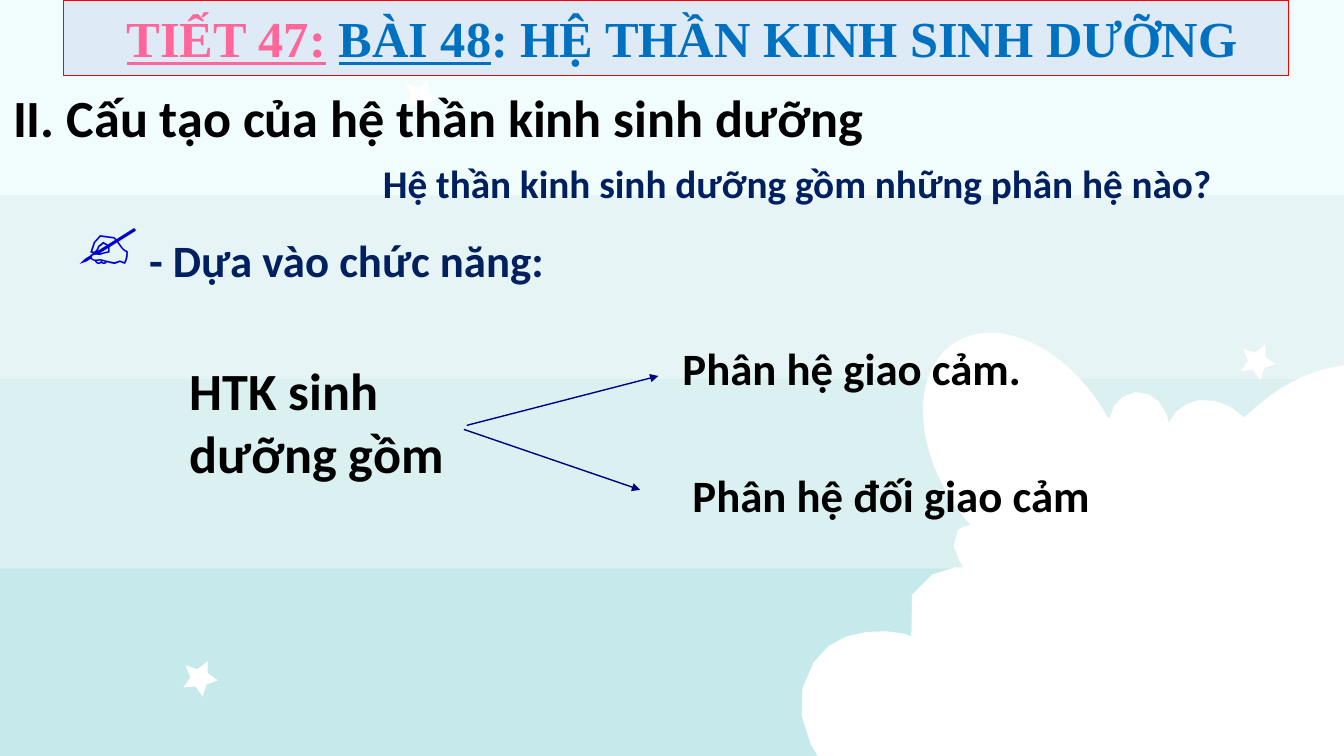
from dataclasses import dataclass

from lxml.etree import SubElement
from pptx import Presentation
from pptx.dml.color import RGBColor
from pptx.enum.shapes import MSO_CONNECTOR as Connector, MSO_SHAPE as Preset
from pptx.enum.text import MSO_ANCHOR as Anchor, PP_ALIGN as Align
from pptx.oxml.ns import qn
from pptx.util import Inches, Pt


@dataclass(frozen=True)
class Theme:
    base: str = "E7F4F5"
    top_band: str = "F1FCFC"
    middle_band: str = "DBF0F1"
    bottom_band: str = "C6EAEB"
    cloud: str = "FFFFFF"
    ink: str = "000000"
    navy: str = "002060"
    arrow: str = "000080"
    hand: str = "0000CC"
    pink: str = "FF6699"
    blue: str = "0070C0"
    banner: str = "DEEBF7"
    banner_edge: str = "FF0000"
    body_font: str = "Calibri"
    title_font: str = "Times New Roman"
    symbol_font: str = "Arial"
    hand_size: float = 48
    heading_size: float = 37.3
    title_size: float = 36
    body_size: float = 32
    question_size: float = 28


THEME = Theme()

CLOUD_START = (10.16, 3.41)
CLOUD_CURVES = [
    ((10.34, 3.76), (10.99, 4.14), (11.01, 4.15)),
    ((11.01, 4.02), (11.13, 3.91), (11.26, 3.89)),
    ((11.39, 3.88), (11.52, 3.97), (11.56, 4.09)),
    ((11.57, 4.11), (11.58, 4.13), (11.58, 4.15)),
    ((11.58, 4.16), (11.59, 4.18), (11.59, 4.2)),
    ((11.64, 4.07), (11.76, 3.99), (11.89, 3.97)),
    ((12.04, 3.95), (12.21, 4.01), (12.34, 4.14)),
    ((12.45, 4.04), (12.57, 3.94), (12.69, 3.86)),
    ((12.89, 3.73), (13.12, 3.64), (13.36, 3.62)),
    ((13.5, 3.6), (13.65, 3.6), (13.79, 3.64)),
    ((14.65, 3.85), (14.83, 4.86), (14.69, 5.61)),
    ((14.6, 6.08), (14.36, 6.48), (14.06, 6.83)),
    ((13.99, 6.91), (13.93, 6.98), (13.86, 7.06)),
    ((13.44, 7.51), (12.93, 7.87), (12.37, 8.13)),
    ((11.89, 8.35), (11.37, 8.49), (10.84, 8.56)),
    ((10.8, 8.56), (10.76, 8.57), (10.73, 8.57)),
    ((10, 8.64), (9.24, 8.6), (8.64, 8.13)),
    ((8.39, 7.93), (8.18, 7.67), (8.04, 7.38)),
    ((7.91, 7.11), (7.9, 6.82), (8.07, 6.57)),
    ((8.2, 6.37), (8.4, 6.29), (8.59, 6.27)),
    ((8.8, 6.24), (9, 6.29), (9.04, 6.31)),
    ((8.89, 5.77), (9.29, 5.66), (9.47, 5.63)),
    ((9.53, 5.63), (9.56, 5.63), (9.56, 5.63)),
    ((9.56, 5.63), (9.37, 5.4), (9.5, 5.26)),
    ((9.54, 5.23), (9.59, 5.21), (9.64, 5.2)),
    ((9.7, 5.19), (9.76, 5.2), (9.81, 5.23)),
    ((9.85, 4.49), (9.54, 4.08), (9.54, 4.08)),
]
STAR = [(0.24, 0), (0.24, 0.12), (0.34, 0.19), (0.23, 0.23), (0.19, 0.35),
        (0.12, 0.25), (0, 0.26), (0.07, 0.16), (0.02, 0.04), (0.14, 0.08)]


def rgb(color):
    return RGBColor.from_string(color)


def paint(shape, color):
    shape.shadow.inherit = False
    shape.fill.solid()
    shape.fill.fore_color.rgb = rgb(color)
    shape.line.fill.background()


def add_preset(slide, preset, box, color, rotation=0):
    shape = slide.shapes.add_shape(preset, *map(Inches, box))
    paint(shape, color)
    shape.rotation = rotation
    return shape


def add_outline(slide, points, color):
    corners = [(Inches(x), Inches(y)) for x, y in points]
    builder = slide.shapes.build_freeform(*corners[0])
    builder.add_line_segments(corners[1:], close=True)
    paint(builder.convert_to_shape(), color)


def trace_curves(start, curves, steps=3):
    points = [start]
    for first, second, end in curves:
        begin = points[-1]
        for step in range(1, steps + 1):
            t = step / steps
            u = 1 - t
            points.append(tuple(
                u**3 * a + 3 * u * u * t * b + 3 * u * t * t * c + t**3 * d
                for a, b, c, d in zip(begin, first, second, end)))
    return points


def style_run(run, font, size, color, bold=True, underline=False):
    run.font.name = font
    run.font.size = Pt(size)
    run.font.color.rgb = rgb(color)
    run.font.bold = bold
    run.font.underline = underline


def add_text(slide, box, text, size, color, font=THEME.body_font):
    frame = slide.shapes.add_textbox(*map(Inches, box)).text_frame
    frame.word_wrap = True
    frame.text = text
    style_run(frame.paragraphs[0].runs[0], font, size, color)
    return frame


def add_arrow(slide, start, end):
    arrow = slide.shapes.add_connector(
        Connector.STRAIGHT, *map(Inches, start + end))
    arrow.line.color.rgb = rgb(THEME.arrow)
    arrow.line.width = Pt(1)
    SubElement(arrow.line._get_or_add_ln(), qn("a:tailEnd"), type="triangle")
    SubElement(arrow._element.spPr, qn("a:effectLst"))


def add_scenery(slide):
    slide.background.fill.solid()
    slide.background.fill.fore_color.rgb = rgb(THEME.base)
    for top, height, color in [(3.76, 1.92, THEME.middle_band),
                               (5.64, 1.92, THEME.bottom_band),
                               (-0.04, 1.98, THEME.top_band)]:
        add_preset(slide, Preset.RECTANGLE, (-0.02, top, 13.43, height), color)
    cloud = trace_curves(CLOUD_START, CLOUD_CURVES) + [(9.89, 3.71)]
    add_outline(slide, cloud, THEME.cloud)
    for puff, rotation in [((8.05, 6.49, 3.41, 5.13), 77.5),
                           ((9.3, 3.19, 1.75, 2.6), 326.8),
                           ((13.64, 3.85, 3.41, 5.13), 53),
                           ((10.48, 4.99, 3.41, 5.13), 53)]:
        add_preset(slide, Preset.OVAL, puff, THEME.cloud, rotation)
    for left, top in [(1.82, 6.56), (12.31, 3.42), (4.01, 0.79)]:
        add_outline(slide, [(left + x, top + y) for x, y in STAR], THEME.cloud)


def add_banner(slide):
    banner = add_preset(slide, Preset.RECTANGLE, (0.63, 0, 12.15, 0.75),
                        THEME.banner)
    banner.line.color.rgb = rgb(THEME.banner_edge)
    banner.line.width = Pt(0.75)
    banner.text_frame.vertical_anchor = Anchor.MIDDLE
    title = banner.text_frame.paragraphs[0]
    title.alignment = Align.CENTER
    lead = title.add_run()
    lead.text = " "
    style_run(lead, THEME.symbol_font, THEME.body_size, THEME.pink, bold=False)
    for text, color, underline in [
            ("TIẾT 47:", THEME.pink, True),
            (" ", THEME.pink, False),
            ("BÀI 48", THEME.blue, True),
            (": HỆ THẦN KINH SINH DƯỠNG", THEME.blue, False)]:
        run = title.add_run()
        run.text = text
        style_run(run, THEME.title_font, THEME.title_size, color,
                  underline=underline)


def add_heading(slide):
    heading = add_text(slide, (0, 0.72, 12.22, 0.88),
                       "II. Cấu tạo của hệ thần kinh sinh dưỡng",
                       THEME.heading_size, THEME.ink)
    heading.vertical_anchor = Anchor.BOTTOM
    heading.margin_left = heading.margin_right = Inches(0.13)
    heading.margin_top = heading.margin_bottom = Inches(0.13)


def main():
    deck = Presentation()
    deck.slide_width, deck.slide_height = Inches(13.33), Inches(7.5)
    slide = deck.slides.add_slide(deck.slide_layouts[6])
    add_scenery(slide)
    for box, text, size, color in [
            ((1.38, 2.26, 7, 0.64), "- Dựa vào chức năng:",
             THEME.body_size, THEME.navy),
            ((1.78, 3.51, 2.95, 1.36), "HTK sinh dưỡng gồm",
             THEME.heading_size, THEME.ink),
            ((6.67, 3.33, 7.28, 0.64), "Phân hệ giao cảm.",
             THEME.body_size, THEME.ink),
            ((6.77, 4.59, 5.5, 0.64), "Phân hệ đối giao cảm",
             THEME.body_size, THEME.ink)]:
        add_text(slide, box, text, size, color)
    add_arrow(slide, (4.63, 4.22), (6.53, 3.73))
    add_arrow(slide, (4.6, 4.26), (6.35, 4.86))
    add_text(slide, (0.67, 1.9, 0.9, 0.91), "✍", THEME.hand_size, THEME.hand,
             THEME.symbol_font)
    add_text(slide, (3.7, 1.53, 10.03, 1.04),
             "Hệ thần kinh sinh dưỡng gồm những phân hệ nào?",
             THEME.question_size, THEME.navy)
    add_banner(slide)
    add_heading(slide)
    deck.save("out.pptx")


if __name__ == "__main__":
    main()
